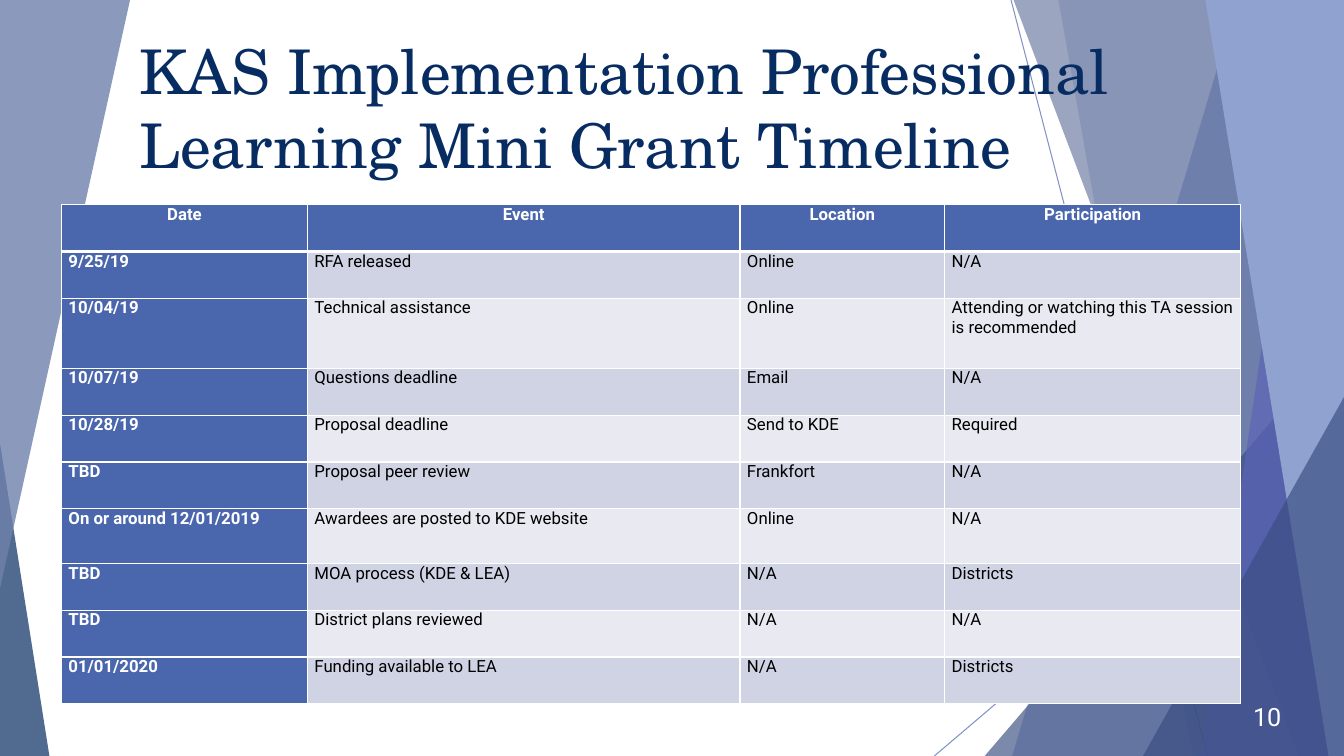
from lxml import etree
from pptx import Presentation, util as u
from pptx.dml.color import RGBColor
from pptx.enum import shapes, text
from pptx.oxml.ns import qn

Pt = u.Pt
WHITE = RGBColor(0xFF, 0xFF, 0xFF)
BLACK = RGBColor(0, 0, 0)
NAVY = RGBColor(0x07, 0x2C, 0x62)
BLUE = RGBColor(0x4A, 0x66, 0xAC)
DARK_BLUE = RGBColor(0x38, 0x4C, 0x81)
VIOLET = RGBColor(0x5C, 0x64, 0xB7)
SKY = RGBColor(0x90, 0xA2, 0xCF)
SLATE = RGBColor(0x6F, 0x81, 0xAC)
BANDS = [RGBColor(0xE9, 0xEA, 0xF1), RGBColor(0xD0, 0xD3, 0xE3)]
WIDTH, HEIGHT = 960, 540

deck = Presentation()
deck.slide_width, deck.slide_height = Pt(WIDTH), Pt(HEIGHT)
slide = deck.slides.add_slide(deck.slide_layouts[6])


def set_alpha(fill_parent, percent):
    color = fill_parent.find(".//" + qn("a:srgbClr"))
    etree.SubElement(color, qn("a:alpha"), val=str(percent * 1000))


def paint(facet, color, percent):
    facet.shadow.inherit = False
    facet.fill.solid()
    facet.fill.fore_color.rgb = color
    set_alpha(facet._element.spPr, percent)
    facet.line.fill.background()


for x1, y1, x2, y2 in [(722.2, 0, 862.6, HEIGHT), (WIDTH, 290.9, 667.4, HEIGHT)]:
    ray = slide.shapes.add_connector(
        shapes.MSO_CONNECTOR.STRAIGHT, Pt(x1), Pt(y1), Pt(x2), Pt(y2))
    ray.line.color.rgb = BLUE
    ray.line.width = Pt(0.75)
    set_alpha(ray._element.spPr, 70)
    etree.SubElement(ray._element.spPr, qn("a:effectLst"))

facets = [
    ("band", 884.2, 722.9, BLUE, 36),
    ("band", 756, 851.8, BLUE, 20),
    ("triangle", (703.4, 240.5, 256.6, 299.5), 1, DARK_BLUE, 66),
    ("band", 723.6, 928.1, DARK_BLUE, 50),
    ("band", 938.2, 858.2, VIOLET, 70),
    ("band", 861.1, 949, SKY, 100),
    ("triangle", (816.5, 283.7, 143.5, 256.3), 1, DARK_BLUE, 66),
    ("triangle", (0, 316.8, 35.3, 223.2), 0, NAVY, 70),
    ("flipped", (0, 0, 92.9, 420.5), 0, SLATE, 80),
]
for kind, first, second, color, percent in facets:
    if kind == "band":
        outline = slide.shapes.build_freeform(first, 0, scale=Pt(1))
        outline.add_line_segments([(WIDTH, 0), (WIDTH, HEIGHT), (second, HEIGHT)])
        facet = outline.convert_to_shape()
    else:
        facet = slide.shapes.add_shape(
            shapes.MSO_SHAPE.ISOSCELES_TRIANGLE, *[Pt(v) for v in first])
        facet.adjustments[0] = second
        if kind == "flipped":
            facet._element.spPr.find(qn("a:xfrm")).set("flipV", "1")
    paint(facet, color, percent)

labels = [
    ("KAS Implementation Professional Learning Mini Grant Timeline",
     (92.2, 20.2, 723.6, 103.7), 44, "TeX Gyre Schola", NAVY,
     text.PP_ALIGN.LEFT, text.MSO_ANCHOR.TOP),
    ("10", (868.3, 497.5, 54, 28.8), 18, "Roboto", WHITE,
     text.PP_ALIGN.RIGHT, text.MSO_ANCHOR.MIDDLE),
]
for words, box, size, font, color, align, anchor in labels:
    frame = slide.shapes.add_textbox(*[Pt(v) for v in box]).text_frame
    frame.word_wrap = True
    frame.vertical_anchor = anchor
    line = frame.paragraphs[0]
    line.text = words
    line.alignment = align
    line.font.size, line.font.name, line.font.color.rgb = Pt(size), font, color

timeline = [
    ("Date", "Event", "Location", "Participation"),
    ("9/25/19", "RFA released", "Online", "N/A"),
    ("10/04/19", "Technical assistance", "Online",
     "Attending or watching this TA session is recommended"),
    ("10/07/19", "Questions deadline", "Email", "N/A"),
    ("10/28/19", "Proposal deadline", "Send to KDE", "Required"),
    ("TBD", "Proposal peer review", "Frankfort", "N/A"),
    ("On or around 12/01/2019", "Awardees are posted to KDE website", "Online", "N/A"),
    ("TBD", "MOA process (KDE & LEA)", "N/A", "Districts"),
    ("TBD", "District plans reviewed", "N/A", "N/A"),
    ("01/01/2020", "Funding available to LEA", "N/A", "Districts"),
]
column_widths = [175.7, 309, 146.2, 211.5]
tall_rows = {2: 50, 6: 39}
row_heights = [tall_rows.get(r, 33.45) for r in range(len(timeline))]
schedule = slide.shapes.add_table(
    len(timeline), len(column_widths), Pt(43.9), Pt(146.2),
    Pt(sum(column_widths)), Pt(sum(row_heights))).table
for column, width in zip(schedule.columns, column_widths):
    column.width = Pt(width)
for row, height in zip(schedule.rows, row_heights):
    row.height = Pt(height)

for r, entries in enumerate(timeline):
    for c, entry in enumerate(entries):
        cell = schedule.cell(r, c)
        heading = r == 0 or c == 0
        cell.margin_left = cell.margin_right = Pt(5)
        cell.margin_top = cell.margin_bottom = 0
        line = cell.text_frame.paragraphs[0]
        line.text = entry
        line.alignment = text.PP_ALIGN.CENTER if r == 0 else text.PP_ALIGN.LEFT
        line.font.size, line.font.name = Pt(12), "Roboto"
        line.font.bold = heading
        line.font.color.rgb = WHITE if heading else BLACK
        props = cell._tc.get_or_add_tcPr()
        for side in ("lnL", "lnR", "lnT", "lnB"):
            thick = (r, side) in [(0, "lnB"), (1, "lnT")]
            border = etree.SubElement(
                props, qn("a:" + side), w=str(Pt(3 if thick else 1)))
            stroke = etree.SubElement(border, qn("a:solidFill"))
            etree.SubElement(stroke, qn("a:srgbClr"), val=str(WHITE))
        cell.fill.solid()
        cell.fill.fore_color.rgb = BLUE if heading else BANDS[r % 2]

deck.save("out.pptx")
